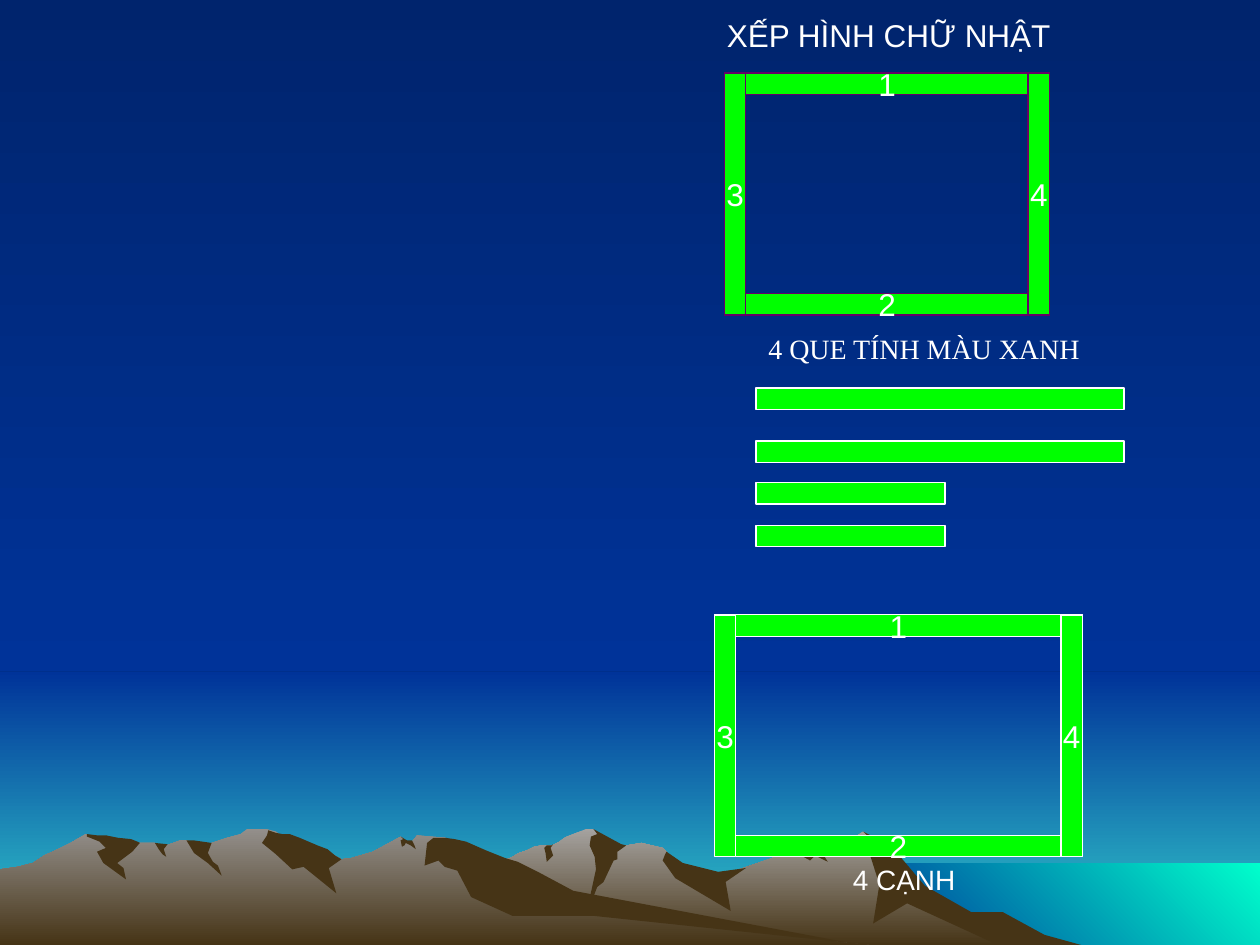
from dataclasses import dataclass

from pptx import Presentation
from pptx import util as u
from pptx.dml.color import RGBColor
from pptx.enum import shapes, text

WHITE = RGBColor(0xFF, 0xFF, 0xFF)
GREEN = RGBColor(0x00, 0xFF, 0x00)
PURPLE = RGBColor(0x66, 0x00, 0x66)
NIGHT = RGBColor(0x00, 0x24, 0x6D)
BLUE = RGBColor(0x00, 0x33, 0x99)
HAZE = RGBColor(0x33, 0xCC, 0xCC)
AQUA = RGBColor(0x00, 0xFF, 0xCC)
EARTH = RGBColor(0x46, 0x34, 0x16)
GREY_ROCK = RGBColor(0xA5, 0xA2, 0x9F)
DIM_ROCK = RGBColor(0x93, 0x8F, 0x8B)

DOWN, UP_RIGHT = 270, 45
STICK = 0.17
HUNDREDTH = u.Inches(1) / 100

Points = list[tuple[int, int]]


@dataclass
class Label:
    words: str
    left: float
    top: float
    width: float
    height: float
    size: int = 18
    font: str = "Arial"


@dataclass
class Frame:
    left: float
    top: float
    width: float
    height: float
    edge: RGBColor


@dataclass
class Ridge:
    """A lit mountain outline and the dark shadows on it, in hundredths of an inch."""
    crest: RGBColor
    outline: Points
    shadows: list[Points]


RIGHT_RIDGE = Ridge(
    GREY_ROCK,
    [(802, 740), (778, 727), (764, 723), (723, 698), (702, 671), (685, 660), (676, 666),
     (656, 671), (629, 671), (613, 681), (566, 697), (536, 690), (529, 676), (526, 673),
     (509, 669), (497, 671), (486, 673), (474, 661), (471, 658), (465, 658), (450, 664),
     (448, 665), (444, 668), (438, 671), (430, 671), (424, 672), (418, 675), (412, 677),
     (405, 681), (399, 683), (394, 685), (355, 698), (327, 709), (277, 739), (258, 750),
     (820, 750)],
    [
        [(796, 724), (771, 724), (734, 703), (707, 671), (685, 660), (689, 664), (685, 671),
         (691, 680), (698, 702), (693, 733), (720, 717), (792, 750), (858, 750), (829, 742)],
        [(471, 658), (474, 662), (469, 664), (468, 671), (472, 680), (473, 690), (465, 727),
         (474, 704), (479, 700), (487, 683), (490, 682), (490, 676), (497, 671), (493, 670)],
        [(529, 676), (528, 678), (526, 683), (536, 697), (580, 723), (576, 700), (592, 689),
         (570, 692), (542, 685)],
        [(650, 671), (630, 671), (631, 672), (631, 675), (630, 676), (643, 683), (647, 679),
         (657, 684), (652, 676), (656, 671)],
        [(433, 677), (432, 673), (434, 671), (438, 671), (439, 670), (437, 673), (439, 679),
         (434, 684)],
    ],
)

LEFT_RIDGE = Ridge(
    DIM_ROCK,
    [(690, 750), (667, 748), (432, 712), (354, 665), (331, 663), (327, 668), (323, 668),
     (318, 664), (296, 676), (279, 681), (271, 682), (260, 676), (236, 681), (223, 663),
     (219, 660), (212, 658), (196, 658), (191, 662), (180, 665), (168, 669), (160, 671),
     (148, 667), (143, 667), (132, 671), (128, 671), (123, 669), (111, 669), (94, 671),
     (68, 662), (56, 669), (46, 674), (35, 679), (26, 685), (14, 688), (0, 690), (0, 750)],
    [
        [(212, 663), (208, 669), (219, 678), (232, 690), (241, 688), (267, 709), (261, 689),
         (271, 682), (266, 679), (260, 674), (252, 671), (238, 665), (230, 662), (224, 662),
         (219, 661), (213, 659)],
        [(370, 668), (361, 666), (354, 665), (344, 665), (339, 669), (337, 687), (348, 683),
         (353, 688), (363, 691), (374, 712), (407, 727), (472, 727), (690, 750), (683, 750),
         (455, 707), (427, 692), (411, 684), (401, 681), (386, 675)],
        [(318, 667), (320, 666), (318, 664), (323, 667), (327, 667), (329, 671), (330, 674),
         (326, 671), (322, 669), (321, 671), (319, 672)],
        [(154, 667), (161, 668), (168, 669), (165, 677), (169, 684), (173, 687), (176, 695),
         (165, 685), (154, 677), (148, 667)],
        [(133, 670), (130, 674), (132, 680), (129, 678), (126, 674), (123, 669)],
        [(109, 668), (111, 669), (105, 676), (93, 685), (98, 689), (100, 698), (82, 685),
         (77, 676), (84, 673), (79, 668), (69, 664), (69, 662), (77, 663), (84, 663),
         (94, 665), (104, 666)],
    ],
)

LABELS = [
    Label("XẾP HÌNH CHỮ NHẬT", 5.67, 0.08, 2.78, 0.4),
    Label("4 QUE TÍNH MÀU XANH", 6, 2.58, 2.68, 0.37, 16, "Times New Roman"),
    Label("4 CẠNH", 6.67, 6.8, 1.01, 0.37, 16),
]
FRAMES = [Frame(5.75, 0.58, 2.58, 1.92, PURPLE), Frame(5.67, 4.88, 2.92, 1.92, WHITE)]
LOOSE_STICKS = [(3.08, 2.92), (3.5, 2.92), (3.83, 1.5), (4.17, 1.5)]


def blend(fill, start: RGBColor, end: RGBColor, angle: int) -> None:
    fill.gradient()
    for stop, color in zip(fill.gradient_stops, (start, end)):
        stop.color.rgb = color
    fill.gradient_angle = angle


def add_rectangle(page, left: float, top: float, width: float, height: float):
    shape = page.shapes.add_shape(
        shapes.MSO_SHAPE.RECTANGLE,
        u.Inches(left), u.Inches(top), u.Inches(width), u.Inches(height))
    shape.shadow.inherit = False
    return shape


def add_band(page, left: float, top: float, width: float, height: float,
             start: RGBColor, end: RGBColor, angle: int = DOWN) -> None:
    band = add_rectangle(page, left, top, width, height)
    blend(band.fill, start, end, angle)
    band.line.fill.background()


def add_outline(page, points: Points):
    builder = page.shapes.build_freeform(*points[0], scale=HUNDREDTH)
    builder.add_line_segments(points[1:], close=True)
    shape = builder.convert_to_shape()
    shape.shadow.inherit = False
    shape.line.fill.background()
    return shape


def add_ridge(page, ridge: Ridge) -> None:
    blend(add_outline(page, ridge.outline).fill, ridge.crest, EARTH, DOWN)
    for points in ridge.shadows:
        shadow = add_outline(page, points)
        shadow.fill.solid()
        shadow.fill.fore_color.rgb = EARTH


def write(box, words: str, size: int, font: str):
    box.text_frame.word_wrap = False
    para = box.text_frame.paragraphs[0]
    para.text = words
    para.font.size = u.Pt(size)
    para.font.name = font
    para.font.color.rgb = WHITE
    return para


def add_label(page, label: Label) -> None:
    box = page.shapes.add_textbox(u.Inches(label.left), u.Inches(label.top),
                                  u.Inches(label.width), u.Inches(label.height))
    write(box, label.words, label.size, label.font)
    box.text_frame.auto_size = text.MSO_AUTO_SIZE.SHAPE_TO_FIT_TEXT


def add_stick(page, left: float, top: float, width: float, height: float,
              edge: RGBColor, number: str = "") -> None:
    stick = add_rectangle(page, left, top, width, height)
    stick.fill.solid()
    stick.fill.fore_color.rgb = GREEN
    stick.line.color.rgb = edge
    stick.line.width = u.Pt(0.75)
    if number:
        stick.text_frame.vertical_anchor = text.MSO_ANCHOR.MIDDLE
        write(stick, number, 18, "Arial").alignment = text.PP_ALIGN.CENTER


def add_frame(page, frame: Frame) -> None:
    """Four numbered sticks: top, bottom, left, right."""
    bottom = frame.top + frame.height - STICK
    right = frame.left + frame.width - STICK
    add_stick(page, frame.left, frame.top, frame.width, STICK, frame.edge, "1")
    add_stick(page, frame.left, bottom, frame.width, STICK, frame.edge, "2")
    add_stick(page, frame.left, frame.top, STICK, frame.height, frame.edge, "3")
    add_stick(page, right, frame.top, STICK, frame.height, frame.edge, "4")


def main() -> None:
    deck = Presentation()
    deck.slide_width, deck.slide_height = u.Inches(10), u.Inches(7.5)
    page = deck.slides.add_slide(deck.slide_layouts[6])
    blend(page.background.fill, NIGHT, BLUE, DOWN)
    add_band(page, 0, 5.33, 10, 2.17, BLUE, HAZE)
    add_band(page, 0, 0, 10, 5.33, NIGHT, BLUE)
    add_band(page, 6.83, 6.85, 3.17, 0.65, BLUE, AQUA, UP_RIGHT)
    for ridge in (RIGHT_RIDGE, LEFT_RIDGE):
        add_ridge(page, ridge)
    for frame in FRAMES:
        add_frame(page, frame)
    for top, width in LOOSE_STICKS:
        add_stick(page, 6, top, width, STICK, WHITE)
    for label in LABELS:
        add_label(page, label)
    deck.save("out.pptx")


if __name__ == "__main__":
    main()
